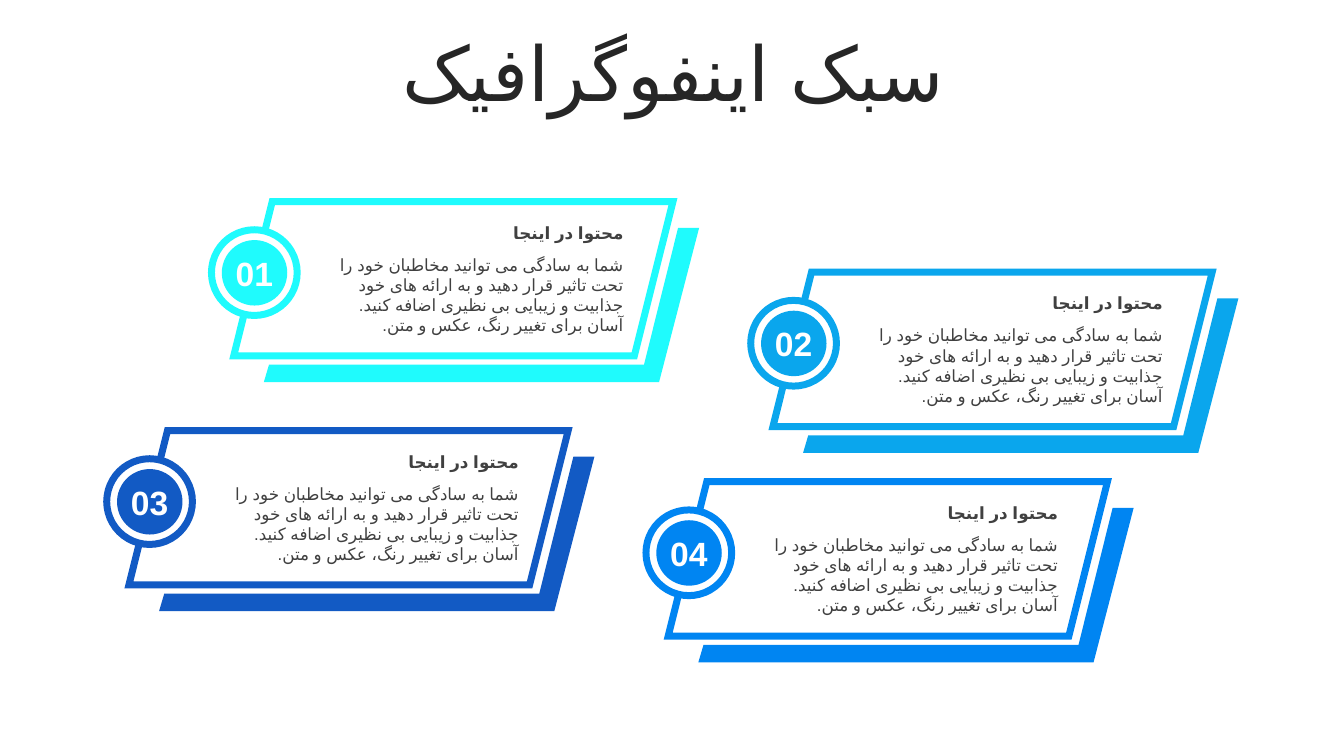
from dataclasses import dataclass

from lxml.etree import SubElement
from pptx import Presentation
from pptx.dml.color import RGBColor
from pptx.enum.shapes import MSO_SHAPE
from pptx.enum.text import MSO_ANCHOR, PP_ALIGN
from pptx.oxml.ns import qn
from pptx.shapes.autoshape import Shape
from pptx.shapes.shapetree import GroupShapes, SlideShapes
from pptx.text.text import _Paragraph
from pptx.util import Cm, Pt

FONT = "Arial"
WHITE = RGBColor(0xFF, 0xFF, 0xFF)
BLACK = RGBColor(0x26, 0x26, 0x26)
GRAY = RGBColor(0x40, 0x40, 0x40)
CYAN = RGBColor(0x1F, 0xFB, 0xFD)
SKY = RGBColor(0x0A, 0xA6, 0xED)
NAVY = RGBColor(0x12, 0x5A, 0xC4)
BLUE = RGBColor(0x00, 0x85, 0xF2)

TITLE = "سبک اینفوگرافیک"
HEAD = "محتوا در اینجا"
BODY = (
    "شما به سادگی می توانید مخاطبان خود را تحت تاثیر قرار دهید و به ارائه های خود "
    "جذابیت و زیبایی بی نظیری اضافه کنید. آسان برای تغییر رنگ، عکس و متن."
)
EDGE = [(11.2, 0.66), (11.73, 0.66), (10.72, 4.55),
        (0.76, 4.55), (0.89, 4.11), (10.34, 4.11)]


@dataclass(frozen=True)
class Box:
    left: float
    top: float
    width: float
    height: float

    def move(self, left: float, top: float) -> "Box":
        return Box(self.left + left, self.top + top, self.width, self.height)

    def cm(self) -> tuple[Cm, Cm, Cm, Cm]:
        return Cm(self.left), Cm(self.top), Cm(self.width), Cm(self.height)


@dataclass(frozen=True)
class Style:
    size: int
    color: RGBColor
    align: PP_ALIGN
    bold: bool = False
    anchor: MSO_ANCHOR = MSO_ANCHOR.TOP
    inset: float = 0.25


@dataclass(frozen=True)
class Card:
    label: str
    left: float
    top: float
    color: RGBColor


FRAME = Box(0, 0, 11.07, 3.89)
RING = Box(-0.56, 0.71, 2.16, 2.16)
DISC = Box(-0.3, 0.97, 1.65, 1.65)
DIGIT = Box(-0.28, 1.16, 1.6, 1.27)
TOPIC = Box(2.26, 0.4, 7.82, 0.76)
PROSE = Box(2.26, 1.21, 7.82, 1.8)
BANNER = Box(0.89, 0.94, 32.16, 2.01)

BIG = Style(54, BLACK, PP_ALIGN.CENTER, anchor=MSO_ANCHOR.MIDDLE)
STRONG = Style(12, GRAY, PP_ALIGN.RIGHT, True, MSO_ANCHOR.MIDDLE)
PLAIN = Style(12, GRAY, PP_ALIGN.RIGHT)
COUNT = Style(24, WHITE, PP_ALIGN.CENTER, True, inset=0.3)

CARDS = [
    Card("01", 5.89, 5.08, CYAN),
    Card("03", 3.25, 10.85, NAVY),
    Card("02", 19.48, 6.86, SKY),
    Card("04", 16.84, 12.14, BLUE),
]


def paint(shape: Shape, fill: RGBColor, line: RGBColor | None = None) -> None:
    shape.shadow.inherit = False
    shape.fill.solid()
    shape.fill.fore_color.rgb = fill
    if line is None:
        shape.line.fill.background()
    else:
        shape.line.color.rgb = line
        shape.line.width = Pt(5)
        SubElement(shape.line._get_or_add_ln(), qn("a:miter"), lim="800000")


def write(shapes: SlideShapes | GroupShapes, box: Box, text: str, style: Style) -> _Paragraph:
    frame = shapes.add_textbox(*box.cm()).text_frame
    frame.word_wrap = True
    frame.vertical_anchor = style.anchor
    frame.margin_left = frame.margin_right = Cm(style.inset)
    frame.text = text
    para = frame.paragraphs[0]
    para.alignment = style.align
    para._p.get_or_add_pPr().set("rtl", "1")
    for run in para.runs:
        font = run.font
        font.name = FONT
        font.size = Pt(style.size)
        font.bold = style.bold
        font.color.rgb = style.color
        props = run._r.get_or_add_rPr()
        props.set("lang", "fa-IR")
        SubElement(props, qn("a:cs"), typeface=FONT)
    return para


def draw(shapes: SlideShapes, card: Card) -> None:
    group = shapes.add_group_shape().shapes

    def place(box: Box) -> Box:
        return box.move(card.left, card.top)

    def add(kind: MSO_SHAPE, box: Box) -> Shape:
        return group.add_shape(kind, *place(box).cm())

    paint(add(MSO_SHAPE.PARALLELOGRAM, FRAME), WHITE, card.color)
    points = [(Cm(card.left + x), Cm(card.top + y)) for x, y in EDGE]
    path = group.build_freeform(*points[0])
    path.add_line_segments(points[1:])
    paint(path.convert_to_shape(), card.color)
    write(group, place(PROSE), BODY, PLAIN)
    write(group, place(TOPIC), HEAD, STRONG)
    paint(add(MSO_SHAPE.OVAL, RING), WHITE, card.color)
    paint(add(MSO_SHAPE.OVAL, DISC), card.color)
    write(group, place(DIGIT), card.label, COUNT)


def main() -> None:
    deck = Presentation()
    deck.slide_width = Cm(33.87)
    deck.slide_height = Cm(19.05)
    shapes = deck.slides.add_slide(deck.slide_layouts[6]).shapes
    para = write(shapes, BANNER, TITLE, BIG)
    para.line_spacing = 0.9
    para.space_before = Pt(10)
    for card in CARDS:
        draw(shapes, card)
    deck.save("out.pptx")


if __name__ == "__main__":
    main()
